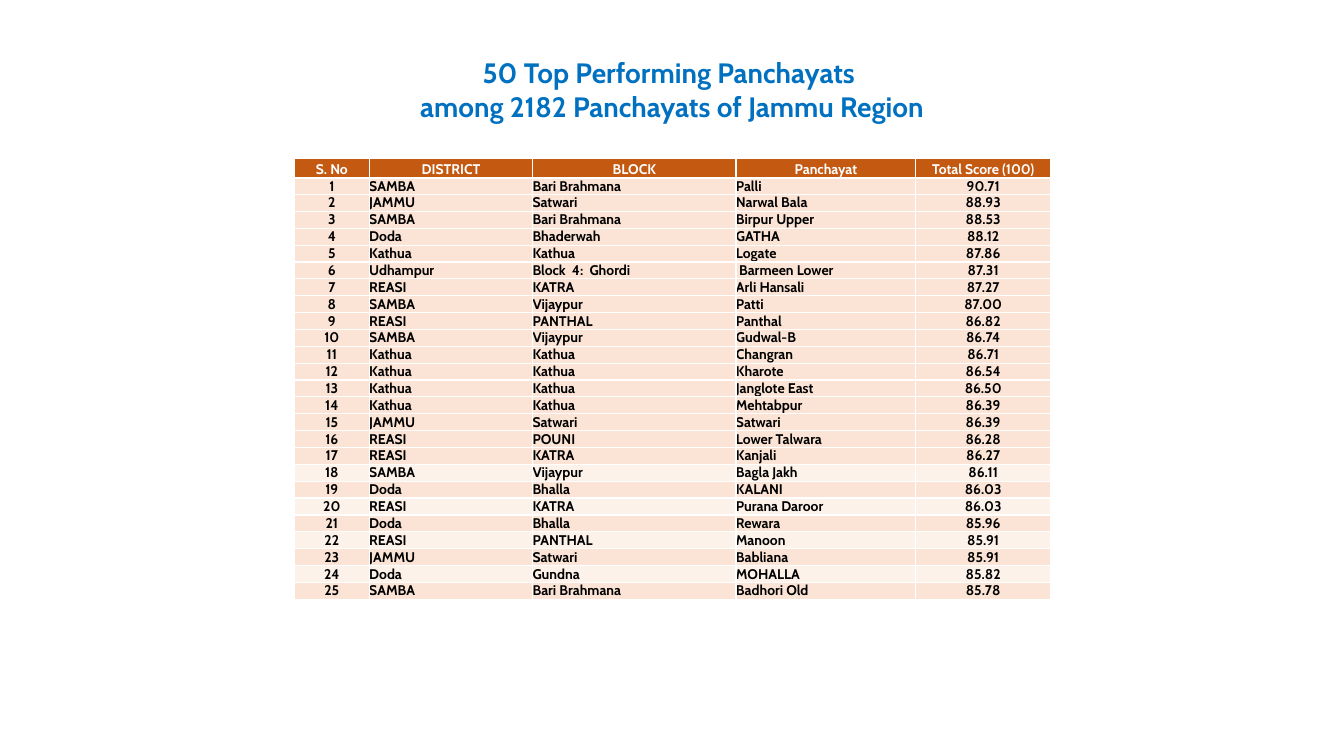
import pptx
import pptx.util
import pptx.dml.color
import pptx.enum.text
import pptx.oxml.ns
import lxml.etree

COLORS = {
    "title": "0070C0",
    "header": "C45911",
    "band": "FBE4D5",
    "light_band": "FDF2EA",
    "text": "000000",
    "white": "FFFFFF",
}
FONT = "Cabin"
ALIGN = pptx.enum.text.PP_ALIGN
ANCHOR = pptx.enum.text.MSO_ANCHOR

HEADINGS = ["S. No", "DISTRICT", "BLOCK", "Panchayat", "Total Score (100)"]
COLUMN_SHARES = [0.099, 0.216, 0.269, 0.238, 0.178]
PANCHAYATS = [
    ("SAMBA", "Bari Brahmana", "Palli", "90.71"),
    ("JAMMU", "Satwari", "Narwal Bala", "88.93"),
    ("SAMBA", "Bari Brahmana", "Birpur Upper", "88.53"),
    ("Doda", "Bhaderwah", "GATHA", "88.12"),
    ("Kathua", "Kathua", "Logate", "87.86"),
    ("Udhampur", "Block  4:  Ghordi", " Barmeen Lower", "87.31"),
    ("REASI", "KATRA", "Arli Hansali", "87.27"),
    ("SAMBA", "Vijaypur", "Patti", "87.00"),
    ("REASI", "PANTHAL", "Panthal", "86.82"),
    ("SAMBA", "Vijaypur", "Gudwal-B", "86.74"),
    ("Kathua", "Kathua", "Changran", "86.71"),
    ("Kathua", "Kathua", "Kharote", "86.54"),
    ("Kathua", "Kathua", "Janglote East", "86.50"),
    ("Kathua", "Kathua", "Mehtabpur", "86.39"),
    ("JAMMU", "Satwari", "Satwari", "86.39"),
    ("REASI", "POUNI", "Lower Talwara", "86.28"),
    ("REASI", "KATRA", "Kanjali", "86.27"),
    ("SAMBA", "Vijaypur", "Bagla Jakh", "86.11"),
    ("Doda", "Bhalla", "KALANI", "86.03"),
    ("REASI", "KATRA", "Purana Daroor", "86.03"),
    ("Doda", "Bhalla", "Rewara", "85.96"),
    ("REASI", "PANTHAL", "Manoon", "85.91"),
    ("JAMMU", "Satwari", "Babliana", "85.91"),
    ("Doda", "Gundna", "MOHALLA", "85.82"),
    ("SAMBA", "Bari Brahmana", "Badhori Old", "85.78"),
]
LIGHT_RANKS = (18, 20, 22, 24)


def add_run(paragraph, text, size, color):
    run = paragraph.add_run()
    run.text = text
    run.font.name = FONT
    run.font.size = pptx.util.Pt(size)
    run.font.bold = True
    run.font.color.rgb = pptx.dml.color.RGBColor.from_string(COLORS[color])


def add_border(cell, side):
    line = lxml.etree.SubElement(
        cell._tc.get_or_add_tcPr(), pptx.oxml.ns.qn(f"a:{side}"), w=str(pptx.util.Pt(1.5))
    )
    fill = lxml.etree.SubElement(line, pptx.oxml.ns.qn("a:solidFill"))
    lxml.etree.SubElement(fill, pptx.oxml.ns.qn("a:srgbClr"), val=COLORS["white"])


deck = pptx.Presentation()
deck.slide_width = pptx.util.Inches(13.33)
deck.slide_height = pptx.util.Inches(7.5)
slide = deck.slides.add_slide(deck.slide_layouts[6])

title = slide.shapes.add_textbox(
    pptx.util.Inches(2.05), pptx.util.Inches(0.5), pptx.util.Inches(9.23), pptx.util.Inches(0.77)
).text_frame
title.word_wrap = True
title.auto_size = pptx.enum.text.MSO_AUTO_SIZE.SHAPE_TO_FIT_TEXT
title.vertical_anchor = ANCHOR.MIDDLE
title.margin_left = title.margin_right = pptx.util.Inches(0.05)
title.margin_top = title.margin_bottom = pptx.util.Inches(0.05)
title_lines = ["50 Top Performing Panchayats ", "among 2182 Panchayats of Jammu Region"]
for index, title_line in enumerate(title_lines):
    paragraph = title.add_paragraph() if index else title.paragraphs[0]
    paragraph.alignment = ALIGN.CENTER
    add_run(paragraph, title_line, 20, "title")

ranking_rows = [HEADINGS]
for rank, panchayat in enumerate(PANCHAYATS, start=1):
    ranking_rows.append([str(rank), *panchayat])

ranking_width = pptx.util.Inches(7.5)
ranking_height = pptx.util.Inches(4.37)
header_height = pptx.util.Inches(0.18)
ranking = slide.shapes.add_table(
    len(ranking_rows), len(HEADINGS),
    pptx.util.Inches(2.92), pptx.util.Inches(1.57), ranking_width, ranking_height,
).table
ranking.horz_banding = False
for column, share in zip(ranking.columns, COLUMN_SHARES):
    column.width = int(ranking_width * share)

for rank, values in enumerate(ranking_rows):
    is_header = rank == 0
    body_height = (ranking_height - header_height) // len(PANCHAYATS)
    ranking.rows[rank].height = header_height if is_header else body_height
    band = "header" if is_header else "light_band" if rank in LIGHT_RANKS else "band"
    for position, value in enumerate(values):
        cell = ranking.cell(rank, position)
        cell.margin_left = cell.margin_right = cell.margin_top = cell.margin_bottom = 0
        cell.vertical_anchor = ANCHOR.TOP if is_header else ANCHOR.MIDDLE
        if rank < 2:
            add_border(cell, "lnT")
        if is_header:
            add_border(cell, "lnB")
        cell.fill.solid()
        cell.fill.fore_color.rgb = pptx.dml.color.RGBColor.from_string(COLORS[band])
        paragraph = cell.text_frame.paragraphs[0]
        centred = is_header or position in (0, len(HEADINGS) - 1)
        paragraph.alignment = ALIGN.CENTER if centred else ALIGN.LEFT
        if is_header:
            paragraph.line_spacing = 1.15
        add_run(paragraph, value, 10, "white" if is_header else "text")

deck.save("out.pptx")
